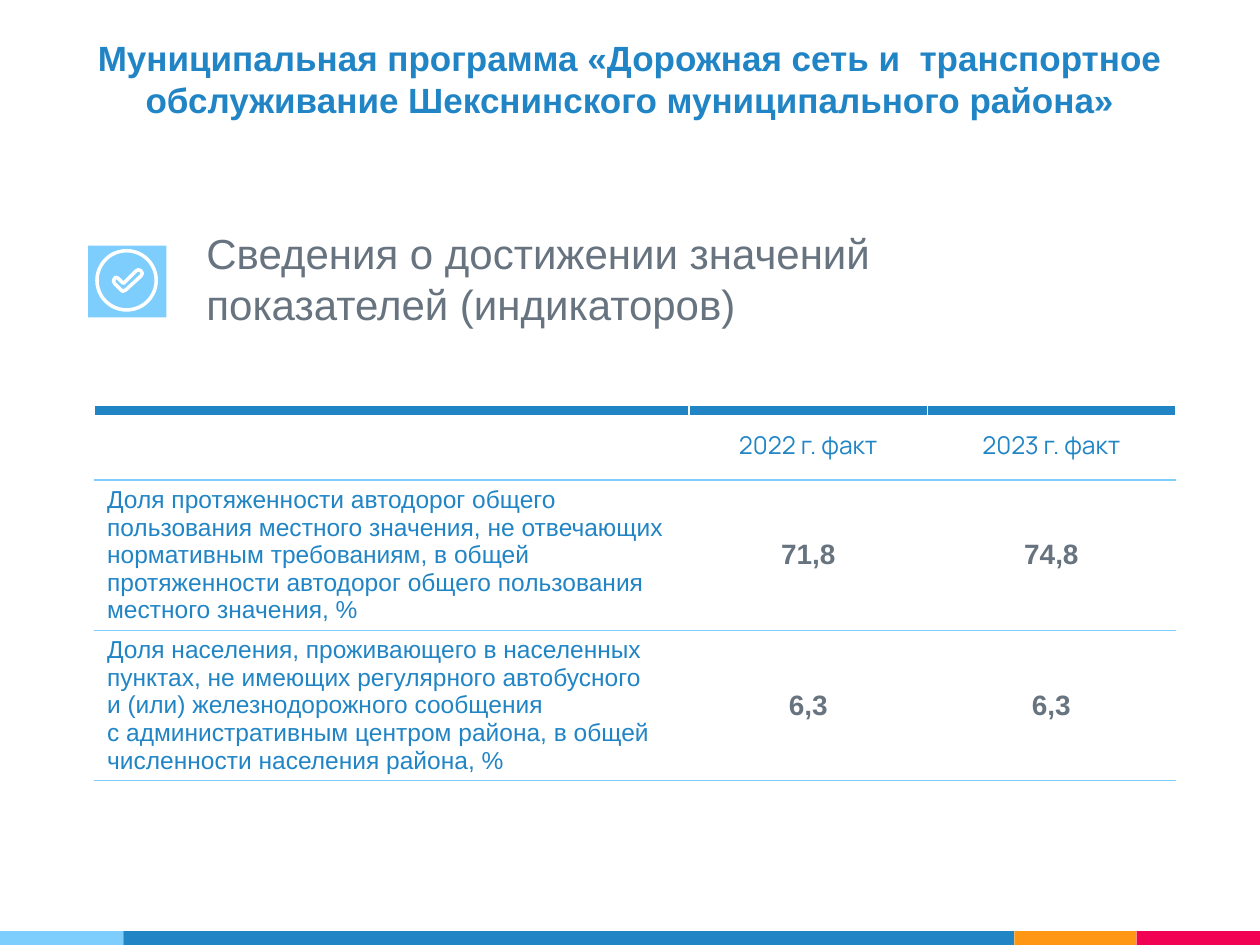
"""Build the slide on road network programme indicators."""
from lxml.etree import SubElement
from pptx import Presentation
from pptx.dml.color import RGBColor
from pptx.enum.shapes import MSO_SHAPE as Shape
from pptx.enum.text import MSO_ANCHOR as Anchor, MSO_AUTO_SIZE as AutoSize, PP_ALIGN as Align
from pptx.oxml.ns import qn
from pptx.util import Inches, Pt

COLORS = {"blue": "2185C5", "sky": "7ECEFD", "orange": "FF9715",
          "red": "F20253", "gray": "677480", "white": "FFFFFF"}
STRIPES = [("sky", 0.98), ("blue", 7.07), ("orange", 0.97), ("red", 0.98)]
TITLE = ("Муниципальная программа «Дорожная сеть и  транспортное "
         "обслуживание Шекснинского муниципального района»")
HEADING = "Сведения о достижении значений показателей (индикаторов)"
ROWS = [
    ("", "2022 г. факт", "2023 г. факт"),
    ("Доля протяженности автодорог общего пользования местного значения, "
     "не отвечающих нормативным требованиям, в общей протяженности автодорог "
     "общего пользования местного значения, %", "71,8", "74,8"),
    ("Доля населения, проживающего в населенных пунктах, не имеющих регулярного автобусного\n"
     "и (или) железнодорожного сообщения\n"
     "с административным центром района, в общей численности населения района, %",
     "6,3", "6,3"),
]
COLUMN_WIDTHS = (4.72, 1.89, 1.97)
ROW_HEIGHTS = (0.55, 1.19, 1.19)
CHECK_MARK = [
    (0.98, 2.31), (1, 2.3), (1.12, 2.19), (1.13, 2.17), (1.12, 2.15), (1.1, 2.14),
    (1.08, 2.15), (0.98, 2.25), (0.94, 2.21), (0.92, 2.2), (0.91, 2.21),
    (0.9, 2.23), (0.91, 2.25), (0.97, 2.31),
]


def color(name):
    """Return the named colour."""
    return RGBColor.from_string(COLORS[name])


def write(text_frame, text, size, color_name, font="Arial", bold=False, align=Align.LEFT):
    """Put text in a frame and format its runs."""
    text_frame.text = text
    for paragraph in text_frame.paragraphs:
        paragraph.alignment = align
        for run in paragraph.runs:
            run.font.name = font
            run.font.size = Pt(size)
            run.font.bold = bold
            run.font.color.rgb = color(color_name)


def add_block(slide, left, top, width, height, fill):
    """Add a plain filled rectangle."""
    block = slide.shapes.add_shape(
        Shape.RECTANGLE, Inches(left), Inches(top), Inches(width), Inches(height))
    block.shadow.inherit = False
    block.fill.solid()
    block.fill.fore_color.rgb = color(fill)
    block.line.fill.background()


def add_stripes(slide):
    """Add the coloured stripes along the bottom edge."""
    left = 0
    for fill, width in STRIPES:
        add_block(slide, left, 7.39, width, 0.11, fill)
        left += width


def add_title(slide):
    """Place and format the slide title."""
    title = slide.shapes.title
    title.left, title.top = Inches(0), Inches(0)
    title.width, title.height = Inches(10), Inches(1.25)
    frame = title.text_frame
    frame.word_wrap = True
    frame.auto_size = AutoSize.NONE
    frame.vertical_anchor = Anchor.MIDDLE
    write(frame, TITLE, 20, "blue", bold=True, align=Align.CENTER)


def add_heading(slide):
    """Add the heading above the table."""
    box = slide.shapes.add_textbox(Inches(1.54), Inches(1.76), Inches(6.04), Inches(0.91))
    box.text_frame.word_wrap = True
    write(box.text_frame, HEADING, 24, "gray")


def outline(shape):
    """Give a shape a white outline and no fill."""
    shape.shadow.inherit = False
    shape.fill.background()
    shape.line.color.rgb = color("white")
    shape.line.width = Pt(2)


def add_check_icon(slide):
    """Add the check mark in a circle on a square."""
    add_block(slide, 0.7, 1.95, 0.62, 0.57, "sky")
    outline(slide.shapes.add_shape(
        Shape.OVAL, Inches(0.77), Inches(1.99), Inches(0.47), Inches(0.47)))
    points = [(Inches(x), Inches(y)) for x, y in CHECK_MARK]
    builder = slide.shapes.build_freeform(*points[0])
    builder.add_line_segments(points[1:], close=True)
    outline(builder.convert_to_shape())


def set_border(cell, side, color_name, width):
    """Draw one border of a table cell."""
    properties = cell._tc.get_or_add_tcPr()
    line = SubElement(properties, qn(f"a:{side}"), w=str(Pt(width)))
    fill = SubElement(line, qn("a:solidFill"))
    SubElement(fill, qn("a:srgbClr"), val=COLORS[color_name])


def format_cell(cell, text, row, column):
    """Fill in and format one table cell."""
    header = row == 0
    if header:
        set_border(cell, "lnT", "blue", 6)
        cell.margin_top = cell.margin_bottom = Inches(0.07)
    else:
        set_border(cell, "lnT", "sky", 0.75)
    set_border(cell, "lnB", "sky", 0.75)
    cell.fill.background()
    if column == 0:
        write(cell.text_frame, text, 14, "blue")
        return
    cell.vertical_anchor = Anchor.MIDDLE
    if header:
        write(cell.text_frame, text, 14, "blue", font="Manrope", align=Align.CENTER)
    else:
        write(cell.text_frame, text, 16, "gray", bold=True, align=Align.CENTER)


def add_indicator_table(slide):
    """Add the table of indicators by year."""
    table = slide.shapes.add_table(
        len(ROWS), len(COLUMN_WIDTHS), Inches(0.75), Inches(3.26),
        Inches(sum(COLUMN_WIDTHS)), Inches(sum(ROW_HEIGHTS))).table
    table.first_row = table.horz_banding = False
    for column, width in zip(table.columns, COLUMN_WIDTHS):
        column.width = Inches(width)
    for row, height in zip(table.rows, ROW_HEIGHTS):
        row.height = Inches(height)
    for row, texts in enumerate(ROWS):
        for column, text in enumerate(texts):
            format_cell(table.cell(row, column), text, row, column)


def main():
    """Build and save the presentation."""
    presentation = Presentation()
    presentation.slide_width, presentation.slide_height = Inches(10), Inches(7.5)
    slide = presentation.slides.add_slide(presentation.slide_layouts[5])
    add_stripes(slide)
    add_indicator_table(slide)
    add_heading(slide)
    add_check_icon(slide)
    add_title(slide)
    presentation.save("out.pptx")


if __name__ == "__main__":
    main()
